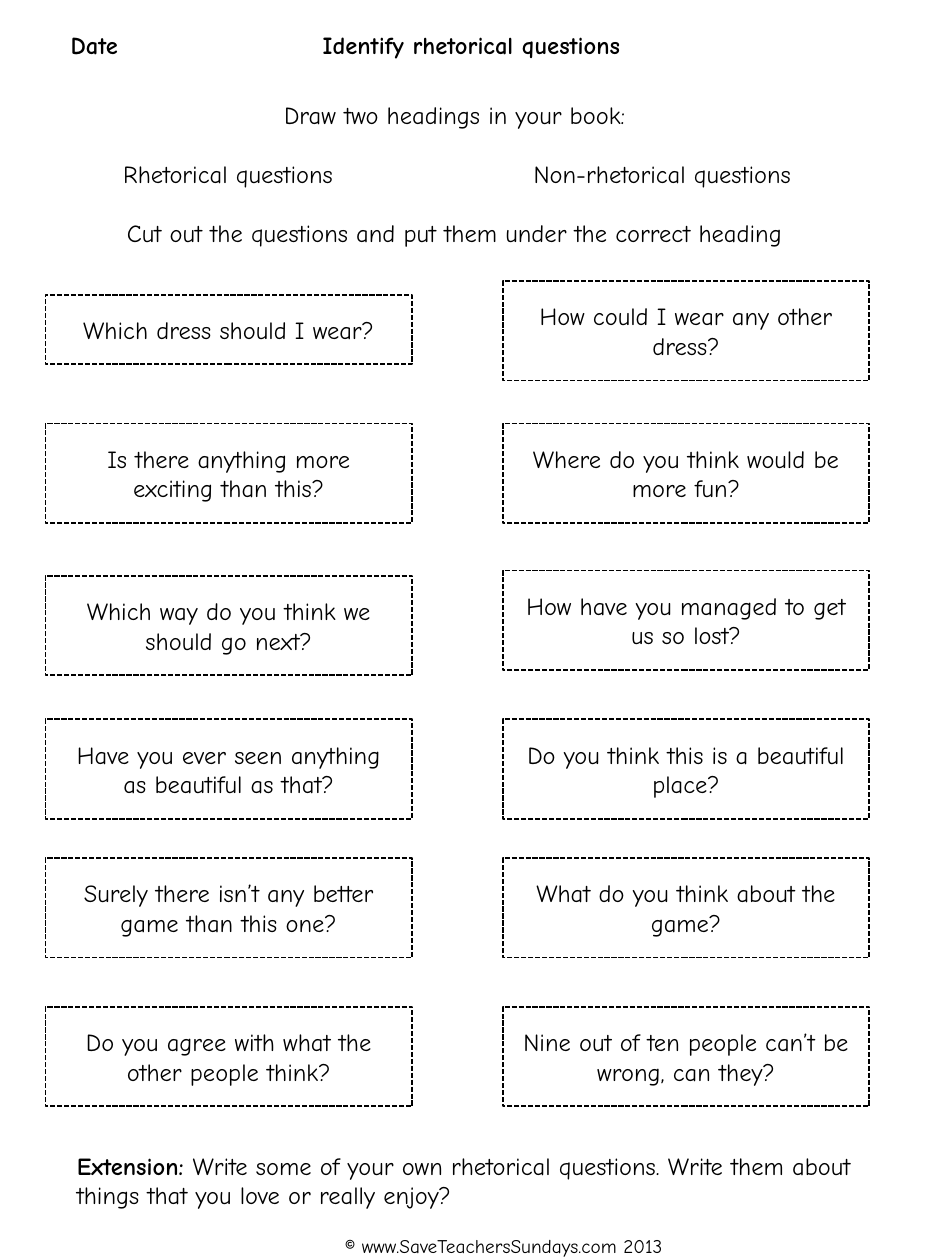
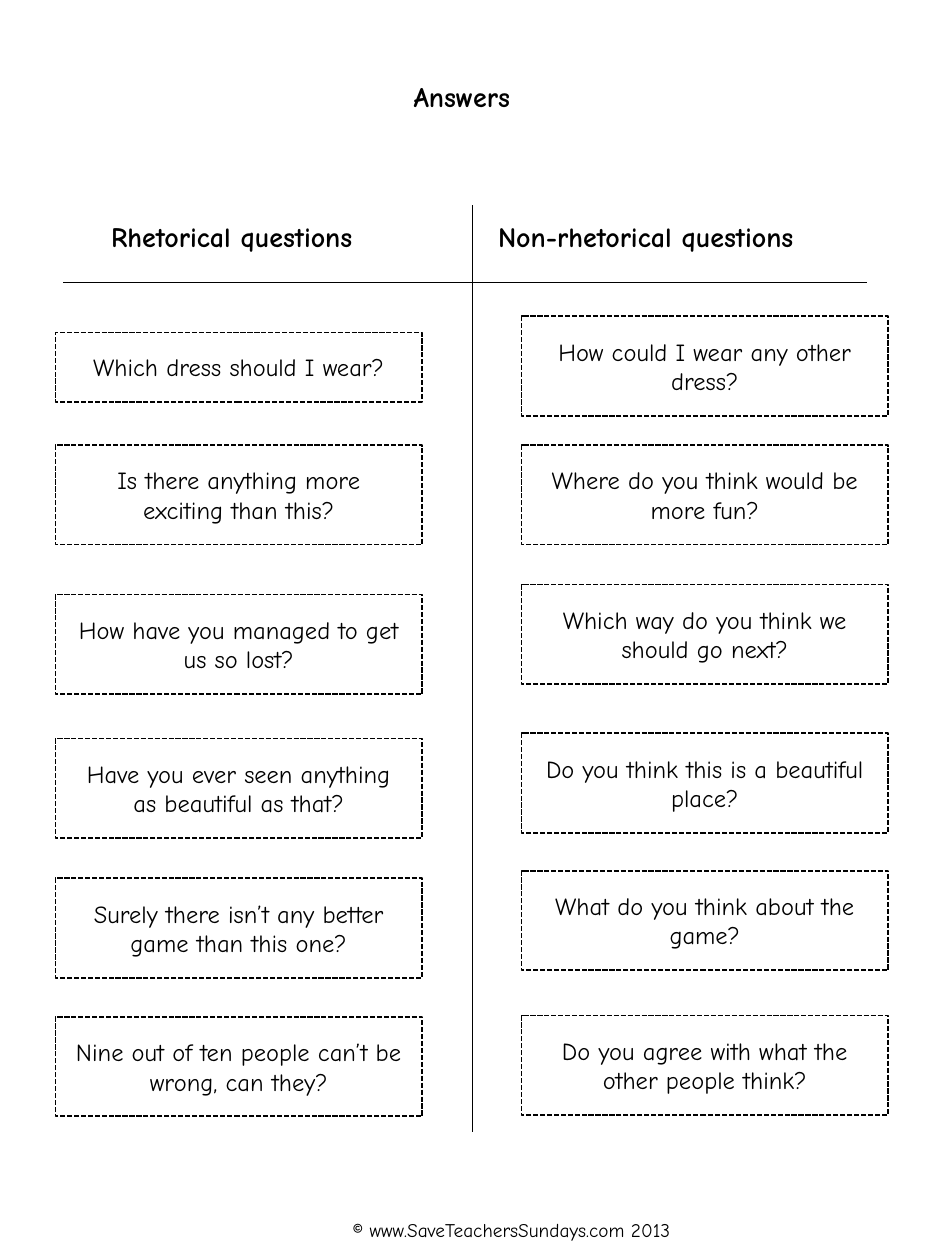
from lxml import etree
from pptx import Presentation
from pptx.dml.color import RGBColor
from pptx.enum import dml, shapes, text
from pptx.oxml import ns
from pptx.util import Pt

INK = RGBColor(0, 0, 0)
FONT = "Comic Neue"
BODY_SIZE = 14
HEADING_SIZE = 16
FOOTER_SIZE = 11
LINE_GAP = 16.8

PAGE_INSETS = (14.4, 14.4)
CARD_INSETS = (11.5, 11.5)
CARD_WIDTH = 209.5
CARD_HEIGHTS = {1: 39.6, 2: 56.9}
CHARS_PER_LINE = 30

HEADINGS = "\tRhetorical questions\tNon-rhetorical questions"
FOOTER = "© www.SaveTeachersSundays.com 2013"
LEFT_QUESTIONS = [
    "Which dress should I wear?",
    "Is there anything more exciting than this?",
    "Which way do you think we should go next?",
    "Have you ever seen anything as beautiful as that?",
    "Surely there isn’t any better game than this one?",
    "Do you agree with what the other people think?",
]
RIGHT_QUESTIONS = [
    "How could I wear any other dress?",
    "Where do you think would be more fun?",
    "How have you managed to get us so lost?",
    "Do you think this is a beautiful place?",
    "What do you think about the game?",
    "Nine out of ten people can’t be wrong, can they?",
]
SWAPPED_ROWS = (2, 5)  # rows whose questions change sides in the answers


def set_tabs(paragraph, stops):
    tab_list = etree.SubElement(paragraph._p.get_or_add_pPr(), ns.qn("a:tabLst"))
    for stop in stops:
        etree.SubElement(tab_list, ns.qn("a:tab"), pos=str(Pt(stop)), algn="l")


def style_run(run, size, bold=False):
    run.font.name = FONT
    run.font.size = Pt(size)
    run.font.bold = bold
    run.font.color.rgb = INK


def fill_frame(frame, lines, size=BODY_SIZE, bold=False, insets=PAGE_INSETS,
               tabs=(), centred=False):
    """Write one paragraph per line; a line with tabs is left aligned on the stops."""
    frame.word_wrap = True
    frame.auto_size = text.MSO_AUTO_SIZE.SHAPE_TO_FIT_TEXT
    frame.vertical_anchor = text.MSO_ANCHOR.MIDDLE
    frame.margin_left = frame.margin_right = Pt(insets[0])
    frame.margin_top = frame.margin_bottom = Pt(insets[1])
    frame.text = "\n".join(lines)
    for row, paragraph in enumerate(frame.paragraphs):
        tabbed = "\t" in lines[row]
        if tabbed:
            set_tabs(paragraph, tabs)
        on_centre = centred and not tabbed
        paragraph.alignment = text.PP_ALIGN.CENTER if on_centre else text.PP_ALIGN.LEFT
        if row:
            paragraph.space_before = Pt(LINE_GAP)
        for run in paragraph.runs:
            style_run(run, size, bold)


def add_text(slide, left, top, width, height, lines, **style):
    box = slide.shapes.add_textbox(Pt(left), Pt(top), Pt(width), Pt(height))
    fill_frame(box.text_frame, lines, **style)
    return box.text_frame


def add_footer(slide, left, top):
    frame = add_text(slide, left, top, 219.6, 20.9, [FOOTER],
                     size=FOOTER_SIZE, insets=(7.2, 3.6))
    frame.word_wrap = False
    frame.vertical_anchor = text.MSO_ANCHOR.TOP


def add_card(slide, left, top, question):
    height = CARD_HEIGHTS[1 if len(question) < CHARS_PER_LINE else 2]
    card = slide.shapes.add_shape(shapes.MSO_SHAPE.RECTANGLE, Pt(left), Pt(top),
                                  Pt(CARD_WIDTH), Pt(height))
    card.shadow.inherit = False
    card.fill.background()
    card.line.color.rgb = INK
    card.line.width = Pt(1)
    card.line.dash_style = dml.MSO_LINE.SQUARE_DOT
    # SQUARE_DOT is the short system dot; the cut line needs the system dash
    dash = card.line._get_or_add_ln().find(ns.qn("a:prstDash"))
    dash.set("val", "sysDash")
    fill_frame(card.text_frame, [question], insets=CARD_INSETS, centred=True)


def add_card_column(slide, left, tops, questions):
    for top, question in zip(tops, questions):
        add_card(slide, left, top, question)


def add_rule(slide, x1, y1, x2, y2):
    rule = slide.shapes.add_connector(shapes.MSO_CONNECTOR.STRAIGHT,
                                      Pt(x1), Pt(y1), Pt(x2), Pt(y2))
    rule.line.color.rgb = INK
    rule.line.width = Pt(0.75)
    etree.SubElement(rule._element.spPr, ns.qn("a:effectLst"))


def build_worksheet(slide):
    add_text(slide, 26, 2.9, 484.6, 45.4, ["Date\tIdentify rhetorical questions"],
             bold=True, tabs=(144,))
    add_text(slide, 23, 42.5, 473.8, 113.8, [
        "Draw two headings in your book:",
        HEADINGS,
        "Cut out the questions and put them under the correct heading",
    ], tabs=(33, 267.5), centred=True)
    add_card_column(slide, 26, (168.5, 242, 329, 411, 490.3, 575.3), LEFT_QUESTIONS)
    add_card_column(slide, 287.3, (160.5, 242, 326, 411, 490.3, 575.3), RIGHT_QUESTIONS)
    extension = add_text(slide, 29.5, 643, 484.6, 62.6, ["Extension: "], bold=True)
    task = extension.paragraphs[0].add_run()
    task.text = ("Write some of your own rhetorical questions. "
                 "Write them about things that you love or really enjoy?")
    style_run(task, BODY_SIZE)
    add_footer(slide, 190, 702)


def build_answers(slide):
    rhetorical, genuine = list(LEFT_QUESTIONS), list(RIGHT_QUESTIONS)
    for row in SWAPPED_ROWS:
        rhetorical[row], genuine[row] = genuine[row], rhetorical[row]
    add_text(slide, 6.5, 36.7, 514.8, 36.7, ["Answers"], size=HEADING_SIZE,
             bold=True, insets=(14.4, 8.6), centred=True)
    add_text(slide, 9.4, 110.9, 524.9, 48.2, [HEADINGS], size=HEADING_SIZE,
             bold=True, tabs=(39.7, 260.8))
    add_rule(slide, 36, 161.3, 495.4, 161.3)
    add_rule(slide, 270, 117.4, 270, 646.6)
    add_card_column(slide, 31.7, (190, 254.2, 339.8, 422, 501.8, 581), rhetorical)
    add_card_column(slide, 298, (180.7, 254.2, 334, 419, 497.5, 580.3), genuine)
    add_footer(slide, 194.4, 692.6)


def main():
    deck = Presentation()
    deck.slide_width, deck.slide_height = Pt(540), Pt(720)
    blank = deck.slide_layouts[6]
    for build in (build_worksheet, build_answers):
        build(deck.slides.add_slide(blank))
    deck.save("out.pptx")


if __name__ == "__main__":
    main()
